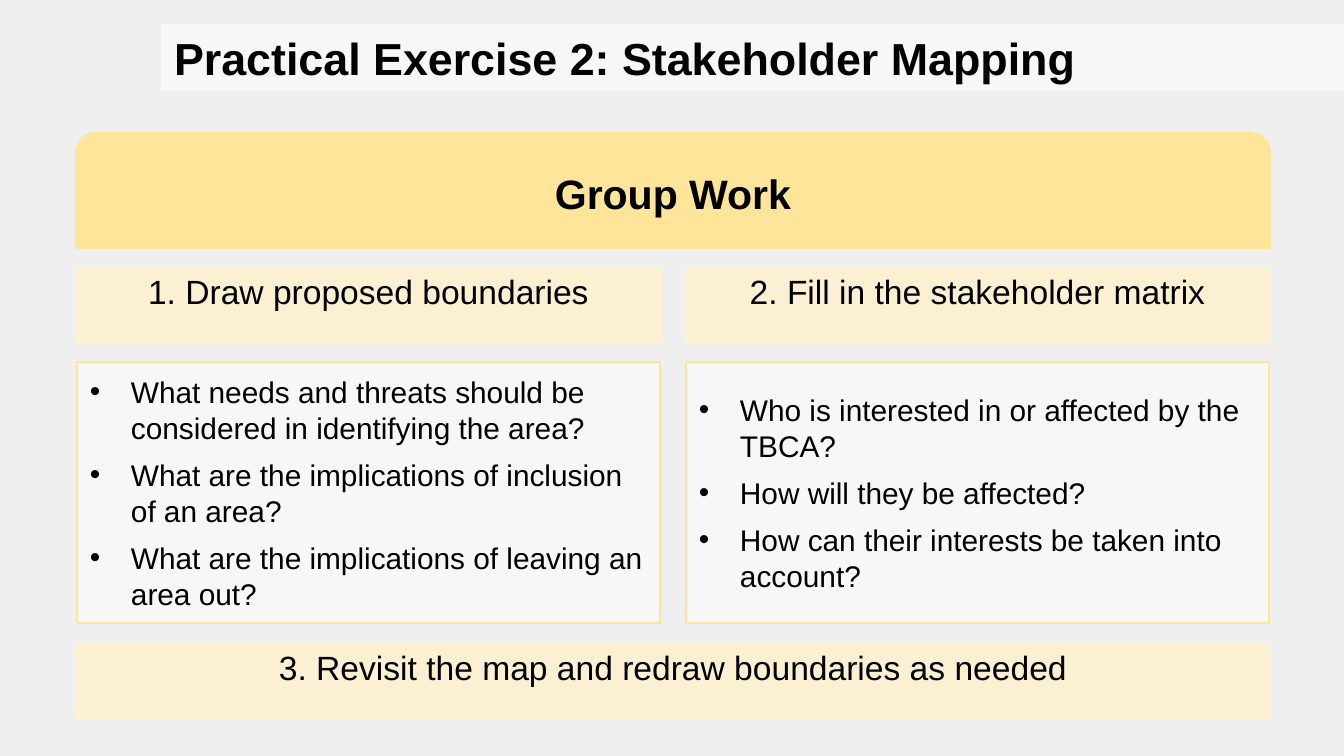
from dataclasses import dataclass
from typing import Optional

from lxml.etree import SubElement
from pptx import Presentation
from pptx.dml.color import RGBColor
from pptx.enum.shapes import MSO_SHAPE as Shape
from pptx.enum.text import MSO_ANCHOR as Anchor, PP_ALIGN as Align
from pptx.oxml.ns import qn
from pptx.util import Pt

EMU_PER_PX = 914400 / 134.4


def px(n: int) -> int:
    return round(n * EMU_PER_PX)


@dataclass(frozen=True)
class Theme:
    font: str = "Arial"
    background: str = "EFEFEF"
    text: str = "000000"
    white: str = "FFFFFF"
    gold: str = "FFE599"
    cream: str = "FFF2CC"
    title_pt: int = 24
    header_pt: int = 22
    step_pt: int = 18
    body_pt: int = 16


THEME = Theme()


@dataclass(frozen=True)
class Panel:
    x: int
    y: int
    w: int
    h: int
    lines: tuple[str, ...]
    size: int
    fill: str
    opacity: int = 100
    line: Optional[str] = None
    line_pt: float = 0.75
    shape: Shape = Shape.RECTANGLE
    align: Align = Align.CENTER
    anchor: Anchor = Anchor.MIDDLE
    pad_y: int = 13
    spacing: float = 1.0
    bold: bool = False
    bullets: bool = False


def rgb(code: str) -> RGBColor:
    return RGBColor.from_string(code)


def add_bullet(p) -> None:
    pPr = p._p.get_or_add_pPr()
    pPr.set("marL", str(px(41)))
    pPr.set("indent", str(-px(41)))
    p.space_after = Pt(6)
    color = SubElement(pPr, qn("a:buClr"))
    SubElement(color, qn("a:srgbClr"), val=THEME.text)
    SubElement(pPr, qn("a:buFont"), typeface=THEME.font)
    SubElement(pPr, qn("a:buChar"), char="•")


def add_text(tf, panel: Panel) -> None:
    tf.word_wrap = True
    tf.vertical_anchor = panel.anchor
    tf.margin_left = tf.margin_right = px(13)
    tf.margin_top = tf.margin_bottom = px(panel.pad_y)
    for i, line in enumerate(panel.lines):
        p = tf.add_paragraph() if i else tf.paragraphs[0]
        p.alignment = panel.align
        p.line_spacing = panel.spacing
        if panel.bullets:
            add_bullet(p)
        r = p.add_run()
        r.text = line
        r.font.name = THEME.font
        r.font.size = Pt(panel.size)
        r.font.bold = panel.bold
        r.font.color.rgb = rgb(THEME.text)


def add_panel(s, panel: Panel) -> None:
    sp = s.shapes.add_shape(panel.shape, px(panel.x), px(panel.y), px(panel.w), px(panel.h))
    sp.shadow.inherit = False
    sp.fill.solid()
    sp.fill.fore_color.rgb = rgb(panel.fill)
    if panel.opacity < 100:
        color = sp._element.spPr.find(qn("a:solidFill")).find(qn("a:srgbClr"))
        SubElement(color, qn("a:alpha"), val=str(panel.opacity * 1000))
    if panel.line:
        sp.line.color.rgb = rgb(panel.line)
        sp.line.width = Pt(panel.line_pt)
    else:
        sp.line.fill.background()
    add_text(sp.text_frame, panel)


def step(x: int, y: int, w: int, text: str) -> Panel:
    return Panel(x, y, w, 73, (text,), THEME.step_pt, THEME.cream, 81, THEME.cream,
                 anchor=Anchor.TOP, pad_y=7, spacing=0.9)


def questions(x: int, y: int, w: int, lines: tuple[str, ...]) -> Panel:
    return Panel(x, y, w, 261, lines, THEME.body_pt, THEME.white, 54, THEME.gold,
                 align=Align.LEFT, bullets=True)


LEFT, FULL_W, COLUMN_W, GAP = 77, 1192, 583, 26
COLUMNS = (
    ("1. Draw proposed boundaries", (
        "What needs and threats should be considered in identifying the area?",
        "What are the implications of inclusion of an area?",
        "What are the implications of leaving an area out?",
    )),
    ("2. Fill in the stakeholder matrix", (
        "Who is interested in or affected by the TBCA?",
        "How will they be affected?",
        "How can their interests be taken into account?",
    )),
)


def main() -> None:
    prs = Presentation()
    prs.slide_width, prs.slide_height = px(1344), px(756)
    s = prs.slides.add_slide(prs.slide_layouts[6])
    s.background.fill.solid()
    s.background.fill.fore_color.rgb = rgb(THEME.background)

    add_panel(s, Panel(LEFT, 134, FULL_W, 113, ("Group Work",), THEME.header_pt, THEME.gold,
                       line=THEME.gold, line_pt=2.25, bold=True,
                       shape=Shape.ROUND_2_SAME_RECTANGLE))
    for i, (heading, lines) in enumerate(COLUMNS):
        x = LEFT + i * (COLUMN_W + GAP)
        add_panel(s, step(x, 269, COLUMN_W, heading))
        add_panel(s, questions(x, 362, COLUMN_W, lines))
    add_panel(s, step(LEFT, 645, FULL_W, "3. Revisit the map and redraw boundaries as needed"))
    add_panel(s, Panel(161, 24, 1183, 67, ("Practical Exercise 2: Stakeholder Mapping",),
                       THEME.title_pt, THEME.white, 55, align=Align.LEFT,
                       anchor=Anchor.TOP, pad_y=7, bold=True))
    prs.save("out.pptx")


if __name__ == "__main__":
    main()
